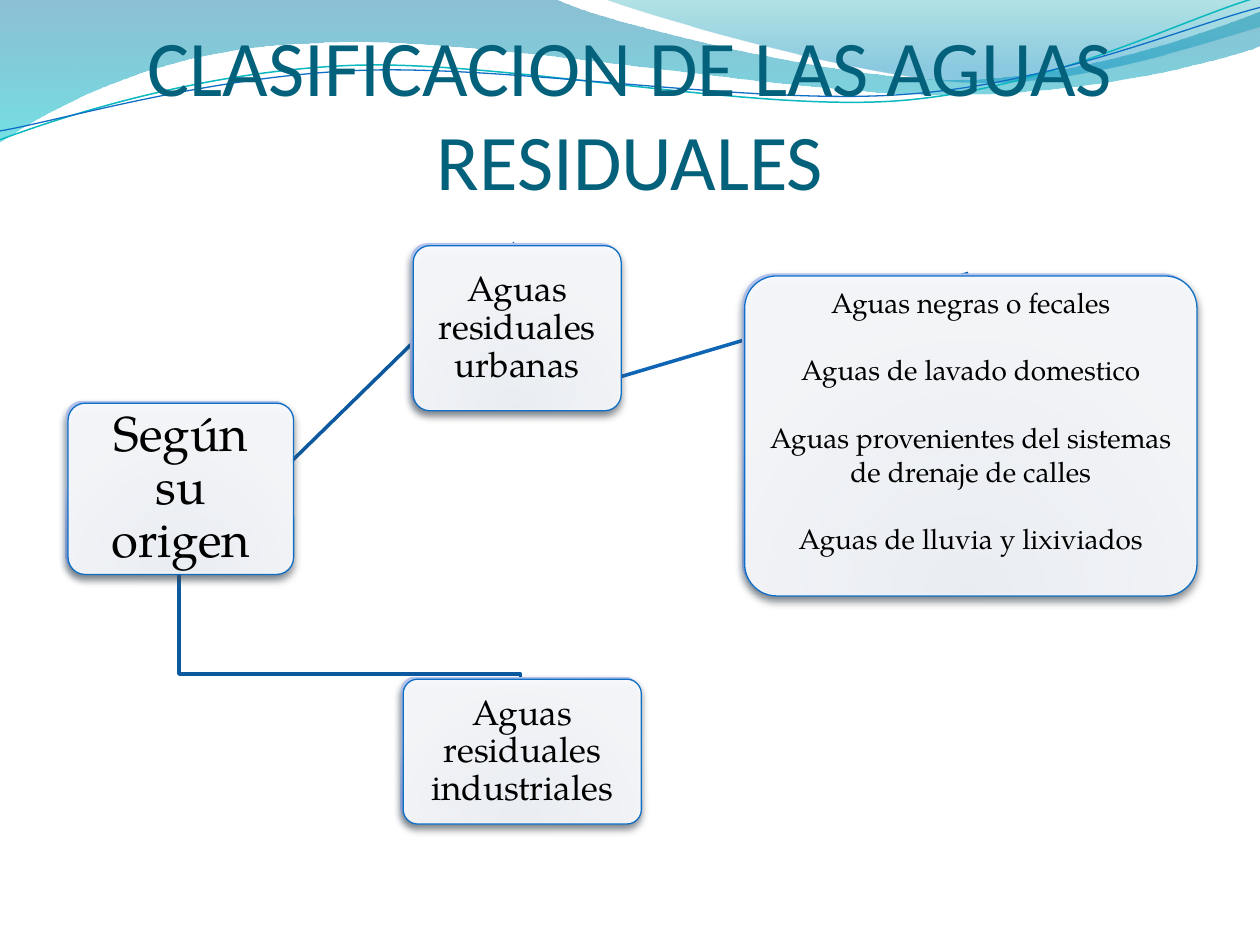
import math

import pptx
import pptx.dml.color
import pptx.enum.shapes
import pptx.enum.text
import pptx.oxml
import pptx.oxml.ns
import pptx.util
from pptx.util import Inches

DRAWING = pptx.oxml.ns.nsdecls("a")
BODY_FONT = "TeX Gyre Pagella"
CENTER = pptx.enum.text.PP_ALIGN.CENTER
MIDDLE = pptx.enum.text.MSO_ANCHOR.MIDDLE
TOP = pptx.enum.text.MSO_ANCHOR.TOP
SIDE_TOP, SIDE_BOTTOM = 0, 2
CURVE_TILT = -2.7

# Each outline is a start point and a list of steps: two numbers make a
# straight step, six a Bezier curve.
LEFT_WAVE = (0, 0), [
    (4.4, -0.01), (4.76, 0.17, 6.64, 0.63, 7.58, 0.63), (8.53, 0.63, 9.58, 0.26, 10, 0.09),
    (10.01, 0.36), (9.83, 0.44, 8.7, 0.76, 7.46, 0.75), (6.22, 0.75, 3.82, 0.28, 2.57, 0.34),
    (1.29, 0.36, 0.46, 0.83, -0.01, 1.13), (0, 0)]
RIGHT_WAVE = (4.79, -0.01), [
    (5.09, 0.11, 6.82, 0.62, 7.69, 0.65), (8.56, 0.69, 9.61, 0.32, 10, 0.21), (10, 0), (4.79, -0.01)]
TEAL_CURVE = (0, 1.11), [
    (0.48, 0.93, 1.58, 0.57, 2.77, 0.52), (3.95, 0.47, 5.93, 0.89, 7.13, 0.8),
    (8.33, 0.71, 9.38, 0.15, 9.98, -0.02)]
BLUE_CURVE = (0, 1.04), [
    (0.47, 0.96, 1.64, 0.61, 2.83, 0.56), (4.03, 0.51, 5.97, 0.84, 7.17, 0.75),
    (8.36, 0.67, 9.41, 0.21, 10, 0.06)]


def color(hex_string):
    return pptx.dml.color.RGBColor.from_string(hex_string)


def set_format(target, values):
    for name, value in values.items():
        setattr(target, name, value)


def set_line(shape, hex_string, width):
    shape.line.color.rgb = color(hex_string)
    shape.line.width = pptx.util.Pt(width)


def set_gradient(shape, stops, direction):
    """Fill with (percent, colour, opacity) stops along a direction element."""
    shape.fill.gradient()
    old = shape.element.spPr.find(pptx.oxml.ns.qn("a:gradFill"))
    marks = "".join(
        f'<a:gs pos="{place * 1000}"><a:srgbClr val="{tone}">'
        f'<a:alpha val="{opacity * 1000}"/></a:srgbClr></a:gs>'
        for place, tone, opacity in stops)
    old.getparent().replace(old, pptx.oxml.parse_xml(
        f'<a:gradFill {DRAWING} rotWithShape="1"><a:gsLst>{marks}</a:gsLst>{direction}</a:gradFill>'))


def set_solid(shape, hex_string, opacity):
    shape.fill.solid()
    shape.fill.fore_color.rgb = color(hex_string)
    tone = shape.element.spPr.find(pptx.oxml.ns.qn("a:solidFill"))[0]
    tone.append(pptx.oxml.parse_xml(f'<a:alpha {DRAWING} val="{opacity * 1000}"/>'))


def set_shadow(shape, hex_string):
    shape.shadow.inherit = False
    effects = shape.element.spPr.find(pptx.oxml.ns.qn("a:effectLst"))
    effects.append(pptx.oxml.parse_xml(
        f'<a:outerShdw {DRAWING} blurRad="57150" dist="38100" dir="5400000" rotWithShape="0">'
        f'<a:srgbClr val="{hex_string}"><a:alpha val="48000"/></a:srgbClr></a:outerShdw>'))


def turn(point, pivot, degrees):
    """Turn a point clockwise about a pivot, and give it in EMU."""
    angle = math.radians(degrees)
    x, y = point[0] - pivot[0], point[1] - pivot[1]
    return (Inches(pivot[0] + x * math.cos(angle) - y * math.sin(angle)),
            Inches(pivot[1] + x * math.sin(angle) + y * math.cos(angle)))


def add_outline(page, start, steps, tilt=0):
    """Add an outline whose six-number steps become true Bezier curves."""
    end = steps[-1][-2:]
    pivot = (start[0] + end[0]) / 2, (start[1] + end[1]) / 2
    groups = [[turn(step[at:at + 2], pivot, -tilt) for at in range(0, len(step), 2)] for step in steps]
    builder = page.shapes.build_freeform(*turn(start, pivot, -tilt))
    builder.add_line_segments([group[-1] for group in groups], close=False)
    shape = builder.convert_to_shape()
    straights = list(shape.element.iter(pptx.oxml.ns.qn("a:lnTo")))
    for straight, group in zip(straights, groups):
        if len(group) == 3:
            points = "".join(f'<a:pt x="{x - shape.left}" y="{y - shape.top}"/>' for x, y in group)
            straight.getparent().replace(straight, pptx.oxml.parse_xml(
                f"<a:cubicBezTo {DRAWING}>{points}</a:cubicBezTo>"))
    shape.rotation = tilt
    shape.shadow.inherit = False
    return shape


def add_waves(page):
    downward = '<a:lin ang="5400000" scaled="0"/>'
    for outline, stops in (
            (LEFT_WAVE, [(0, "0074A1", 45), (100, "00C6CF", 55)]),
            (RIGHT_WAVE, [(0, "00A1A9", 30), (80, "008BBF", 45)])):
        wave = add_outline(page, *outline)
        set_gradient(wave, stops, downward)
        wave.line.fill.background()
    for outline, tone, width in ((TEAL_CURVE, "0AB8BF", 0.85), (BLUE_CURVE, "0F6FC6", 0.75)):
        curve = add_outline(page, *outline, tilt=CURVE_TILT)
        curve.fill.background()
        set_line(curve, tone, width)


def add_title(page, left, top, width, height):
    title = page.shapes.title
    page.shapes.element.append(title.element)  # in front of the waves
    set_format(title, dict(left=left, top=top, width=width, height=height))
    frame = title.text_frame
    frame.text = "CLASIFICACION DE LAS AGUAS RESIDUALES"
    set_format(frame, dict(
        word_wrap=True, auto_size=pptx.enum.text.MSO_AUTO_SIZE.NONE,
        vertical_anchor=pptx.enum.text.MSO_ANCHOR.BOTTOM,
        margin_left=0, margin_top=Inches(0.05), margin_right=0, margin_bottom=0))
    para = frame.paragraphs[0]
    set_format(para, dict(alignment=CENTER, line_spacing=1.0))
    set_format(para.font, dict(name="Calibri", size=pptx.util.Pt(45)))
    para.font.color.rgb = color("04617B")


def add_card(page, left, top, width, height, lines, size, margin, anchor=MIDDLE, spacing=0.9, gap=0):
    """Add a rounded card over a blue backing, and return the backing."""
    backing, front = (
        page.shapes.add_shape(pptx.enum.shapes.MSO_SHAPE.ROUNDED_RECTANGLE,
                              left + shift, top + shift, width, height)
        for shift in (0, Inches(0.02)))
    for shape, shade in ((backing, "042747"), (front, "5A5A5A")):
        shape.adjustments[0] = 0.1
        set_shadow(shape, shade)
    set_gradient(backing, [(0, "003D87", 100), (68, "668DD7", 100), (100, "B3C4EF", 100)],
                 '<a:path path="circle"><a:fillToRect l="50000" t="130000" r="50000" b="-30000"/></a:path>')
    backing.line.fill.background()
    set_solid(front, "FFFFFF", 90)
    set_line(front, "0F6FC6", 0.75)

    frame = front.text_frame
    frame.text = "\n".join(lines)
    set_format(frame, dict(word_wrap=True, vertical_anchor=anchor))
    set_format(frame, {f"margin_{side}": Inches(margin) for side in ("left", "right", "top", "bottom")})
    if anchor == TOP:
        frame.margin_top = 0  # the round corners already inset the text
    for para in frame.paragraphs:
        set_format(para, dict(alignment=CENTER, line_spacing=spacing, space_after=pptx.util.Pt(gap)))
        set_format(para.font, dict(name=BODY_FONT, size=pptx.util.Pt(size)))
        para.font.color.rgb = color("000000")
    return backing


def add_link(page, tone):
    link = page.shapes.add_connector(pptx.enum.shapes.MSO_CONNECTOR.STRAIGHT, 0, 0, 0, 0)
    set_line(link, tone, 2)
    link.element.spPr.append(pptx.oxml.parse_xml(f"<a:effectLst {DRAWING}/>"))
    return link


def add_diagram(page, left, top):
    """Add the links first, so that they lie behind the cards."""
    elbow = add_outline(page, (1.42, 4.54), [(1.42, 5.35), (4.13, 5.35), (4.13, 5.37)])
    elbow.fill.background()
    set_line(elbow, "0C599F", 2)
    detail_link = add_link(page, "0E65B4")
    urban_link = add_link(page, "0C599F")

    def place(x, y, width, height, *text, **options):
        return add_card(page, left + Inches(x), top + Inches(y), Inches(width), Inches(height),
                        *text, **options)

    origin = place(0, 1.25, 1.79, 1.36, ["Según su origen"], 28, 0.12)
    urban = place(2.74, 0, 1.65, 1.31, ["Aguas residuales urbanas"], 20, 0.08)
    detail = place(5.37, 0.24, 3.59, 2.54, [
        "Aguas negras o fecales",
        "Aguas de lavado domestico",
        "Aguas provenientes del sistemas de drenaje de calles",
        "Aguas de lluvia y lixiviados",
    ], 16, 0.07, anchor=TOP, spacing=1.0, gap=19.5)
    place(2.66, 3.44, 1.89, 1.15, ["Aguas residuales industriales"], 20, 0.08)

    for link, source, target in ((detail_link, urban, detail), (urban_link, origin, urban)):
        link.begin_connect(source, SIDE_BOTTOM)
        link.end_connect(target, SIDE_TOP)


def main():
    deck = pptx.Presentation()
    set_format(deck, dict(slide_width=Inches(10), slide_height=Inches(7.5)))
    page = deck.slides.add_slide(deck.slide_layouts[5])
    add_waves(page)
    add_title(page, Inches(0.5), Inches(0.77), Inches(9), Inches(0.87))
    add_diagram(page, Inches(0.52), Inches(1.93))
    deck.save("out.pptx")


if __name__ == "__main__":
    main()
